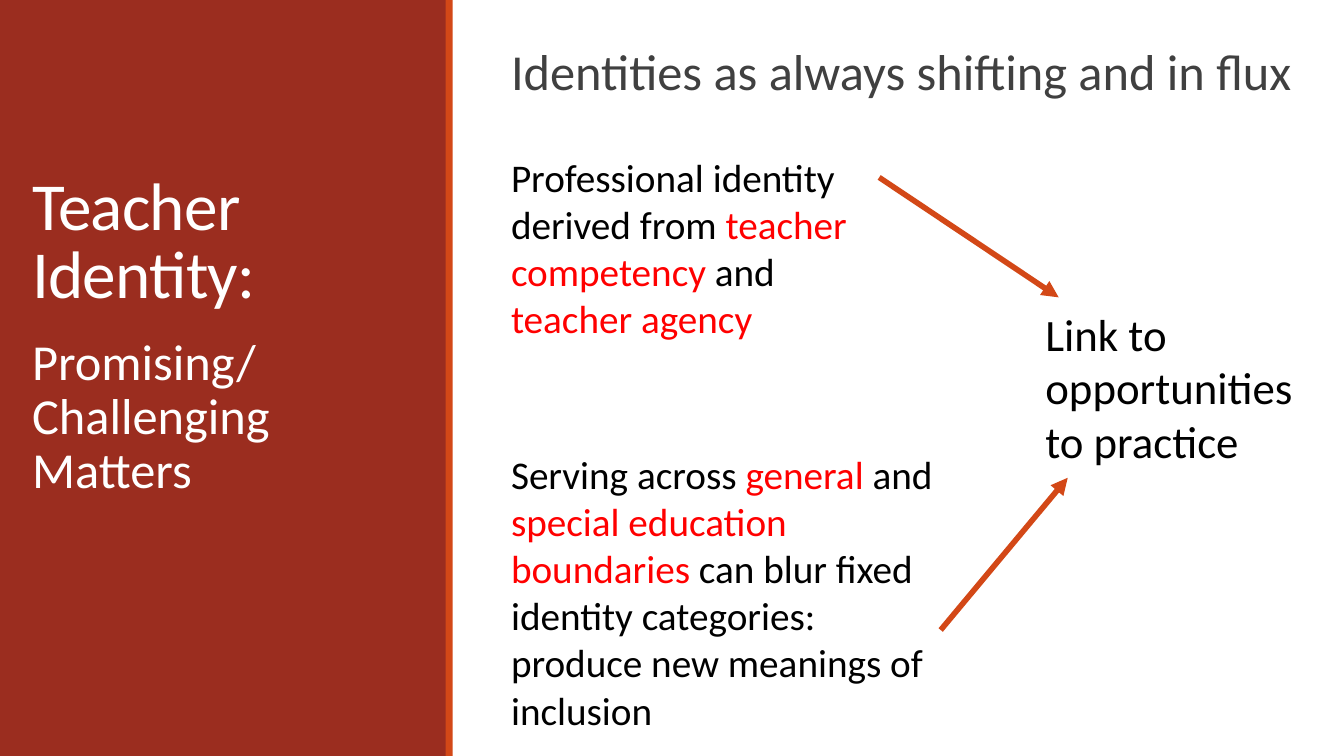
from pptx import Presentation
from pptx.dml.color import RGBColor
from pptx.enum.shapes import MSO_CONNECTOR, MSO_SHAPE
from pptx.enum.text import MSO_ANCHOR
from pptx.oxml.ns import qn
from pptx.util import Pt
from lxml.etree import SubElement

PX = 9144  # 100 px to the inch
PAGE_WIDTH, PAGE_HEIGHT = 1333, 750
BRICK = RGBColor(0x9B, 0x2D, 0x1F)
ORANGE = RGBColor(0xD3, 0x48, 0x17)
WHITE = RGBColor(0xFF, 0xFF, 0xFF)
BLACK = RGBColor(0x00, 0x00, 0x00)
RED = RGBColor(0xFF, 0x00, 0x00)
GREY = RGBColor(0x40, 0x40, 0x40)


def scale(*lengths):
    return [length * PX for length in lengths]


def add_bar(page, box, color):
    bar = page.shapes.add_shape(MSO_SHAPE.RECTANGLE, *scale(*box))
    bar.shadow.inherit = False
    bar.fill.solid()
    bar.fill.fore_color.rgb = color
    bar.line.fill.background()


def add_text(page, box, paragraphs, size, line_spacing=1.0, tracking=0, **frame_format):
    """Each paragraph is a list of (text, color) spans; tracking is in 1/100 pt."""
    frame = page.shapes.add_textbox(*scale(*box)).text_frame
    for name, value in {"word_wrap": True, **frame_format}.items():
        setattr(frame, name, value)
    for index, spans in enumerate(paragraphs):
        para = frame.add_paragraph() if index else frame.paragraphs[0]
        para.line_spacing = line_spacing
        for text, color in spans:
            span = para.add_run()
            span.text = text
            for name, value in {"name": "Calibri", "size": Pt(size)}.items():
                setattr(span.font, name, value)
            span.font.color.rgb = color
            if tracking:
                span.font._element.set("spc", str(tracking))


def add_arrow(page, start, end):
    arrow = page.shapes.add_connector(MSO_CONNECTOR.STRAIGHT, *scale(*start, *end))
    arrow.line.color.rgb = ORANGE
    arrow.line.width = Pt(4)
    SubElement(arrow.line._get_or_add_ln(), qn("a:tailEnd"), type="triangle")
    SubElement(arrow._element.spPr, qn("a:effectLst"))


def add_side_panel(page, left, top, width, height):
    add_bar(page, (left, top, width, height), BRICK)
    add_bar(page, (left + width - 1, top, 7, height), ORANGE)
    add_text(page, (left + 22, top + 65, 398, 250), [[("Teacher Identity:", WHITE)]],
             48, 0.85, tracking=-50, vertical_anchor=MSO_ANCHOR.BOTTOM)
    add_text(page, (left + 22, top + 329, 350, 370),
             [[("Promising/", WHITE)], [("Challenging Matters", WHITE)]], 36, 0.9)


def add_identity_diagram(page, left, top, width, height):
    add_text(page, (left, top, width, 88),
             [[("Identities as always shifting and in flux", GREY)]],
             36, 0.9, margin_left=10 * PX, margin_right=0)
    add_text(page, (left, top + 105, 405, 199), [[
        ("Professional identity derived from ", BLACK),
        ("teacher competency ", RED),
        ("and ", BLACK),
        ("teacher agency", RED)]], 28)
    add_text(page, (left, top + 400, 438, height - 400), [[
        ("Serving across ", BLACK),
        ("general", RED),
        (" and ", BLACK),
        ("special education boundaries ", RED),
        ("can blur fixed identity categories: produce new meanings of inclusion", BLACK)]], 28)
    add_arrow(page, (left + 375, top + 134), (left + 553, top + 253))
    add_arrow(page, (left + 436, top + 583), (left + 562, top + 432))
    add_text(page, (left + 530, top + 257, 306, 172),
             [[("Link to opportunities to practice", BLACK)]], 32)


def main():
    deck = Presentation()
    deck.slide_width, deck.slide_height = scale(PAGE_WIDTH, PAGE_HEIGHT)
    page = deck.slides.add_slide(deck.slide_layouts[6])
    add_side_panel(page, 0, 0, 443, PAGE_HEIGHT)
    add_identity_diagram(page, 497, 42, 802, 692)
    deck.save("out.pptx")


if __name__ == "__main__":
    main()
